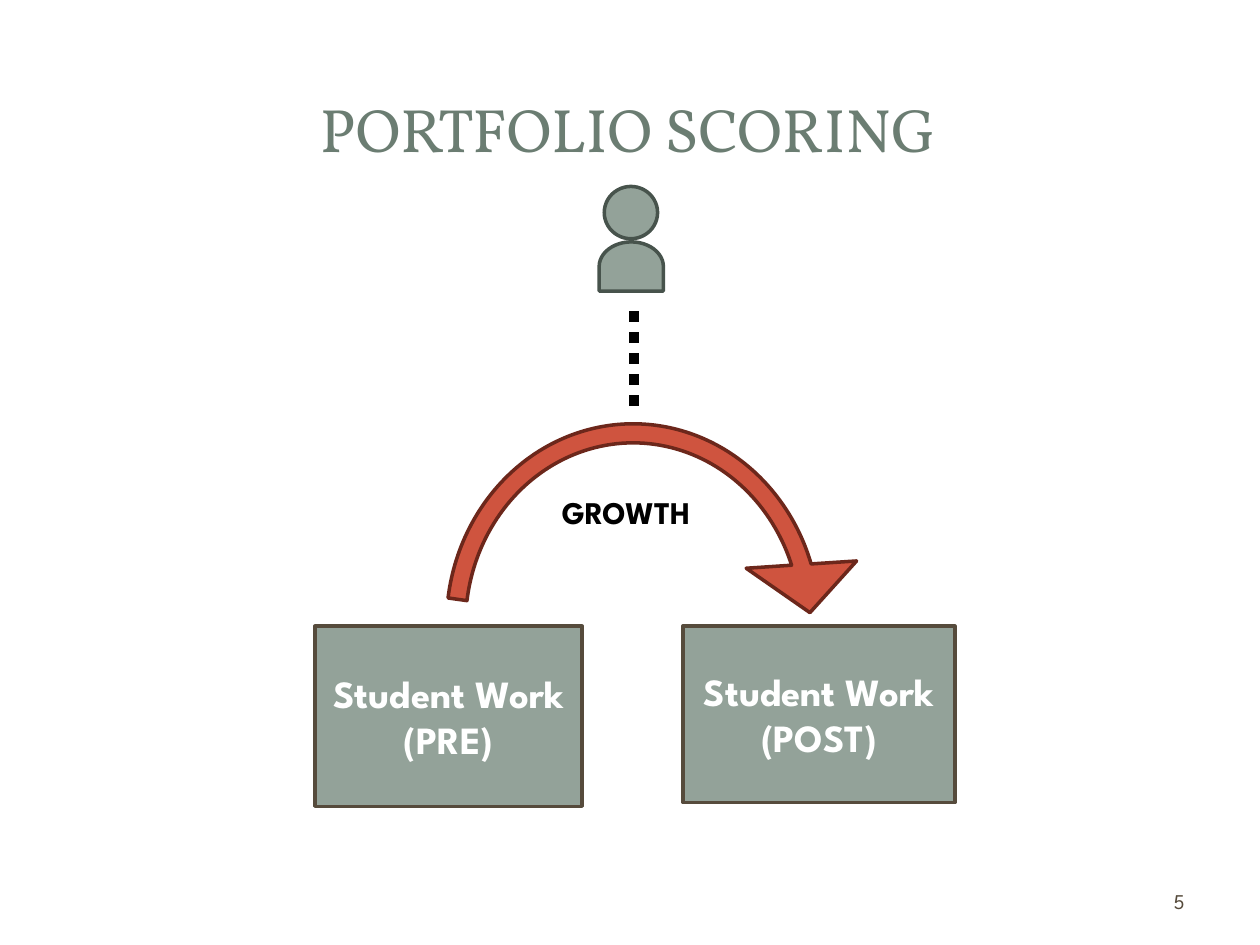
from lxml import etree
from pptx import Presentation
from pptx.dml.color import RGBColor
from pptx.enum.dml import MSO_LINE
from pptx.enum.shapes import MSO_CONNECTOR, MSO_SHAPE
from pptx.enum.text import MSO_ANCHOR, PP_ALIGN
from pptx.oxml.ns import qn
from pptx.util import Inches, Pt

RECTANGLE = MSO_SHAPE.RECTANGLE
CIRCULAR_ARROW = MSO_SHAPE.CIRCULAR_ARROW
HEAD = MSO_SHAPE.FLOWCHART_CONNECTOR
TORSO = MSO_SHAPE.FLOWCHART_DELAY
STRAIGHT = MSO_CONNECTOR.STRAIGHT
DOTTED = MSO_LINE.ROUND_DOT
LEFT, CENTER, RIGHT = PP_ALIGN.LEFT, PP_ALIGN.CENTER, PP_ALIGN.RIGHT
TOP, MIDDLE = MSO_ANCHOR.TOP, MSO_ANCHOR.MIDDLE

COLORS = {
    "title": "6B7D72", "sage": "93A299", "sage_edge": "47534C",
    "brown": "564B3C", "red": "CF543F", "red_edge": "6C271B",
    "white": "FFFFFF", "black": "000000",
}
HEADING_FONT, BODY_FONT = "Vollkorn", "League Spartan"
COLUMNS, ROWS = 100, 75
CELL = Inches(0.1)


def color(name):
    """Return the named palette colour."""
    return RGBColor.from_string(COLORS[name])


def grid(*cells):
    """Turn grid columns and rows into slide lengths."""
    return [round(cell * CELL) for cell in cells]


def write(frame, text, size=18, font=BODY_FONT, ink="black", bold=False,
          align=LEFT, anchor=MIDDLE):
    """Write one formatted paragraph into a text frame."""
    frame.word_wrap = True
    frame.vertical_anchor = anchor
    paragraph = frame.paragraphs[0]
    paragraph.alignment = align
    run = paragraph.add_run()
    run.text = text
    run.font.size, run.font.name, run.font.bold = Pt(size), font, bold
    run.font.color.rgb = color(ink)


def add_label(slide, box, text, **style):
    """Place free-standing text in a grid box."""
    write(slide.shapes.add_textbox(*grid(*box)).text_frame, text, **style)


def add_outlined(shapes, kind, box, fill, edge):
    """Draw a filled preset shape with a two-point outline."""
    shape = shapes.add_shape(kind, *grid(*box))
    shape.shadow.inherit = False
    shape.fill.solid()
    shape.fill.fore_color.rgb = color(fill)
    shape.line.color.rgb = color(edge)
    shape.line.width = Pt(2)
    return shape


def add_work_card(slide, box, stage):
    """Draw a student work card for one stage."""
    card = add_outlined(slide.shapes, RECTANGLE, box, "sage", "brown")
    write(card.text_frame, f"Student Work ({stage})", size=22, ink="white",
          bold=True, align=CENTER)


def add_growth_arc(slide, box):
    """Draw the growth arrow and the label beneath its arch."""
    left, top, width, height = box
    arc = add_outlined(slide.shapes, CIRCULAR_ARROW, box, "red", "red_edge")
    for index, value in enumerate((0.041, 9.46, 204.278, 112.861, 0.119)):
        arc.adjustments[index] = value
    label_box = (left + 0.32 * width, top + 0.22 * height, 0.36 * width, 4)
    add_label(slide, label_box, "GROWTH", bold=True, anchor=TOP)


def add_scorer(slide, box):
    """Draw the scorer from a head and an upturned torso."""
    left, top, width, height = box
    torso_width, torso_height = width, 0.47 * height
    middle = left + width / 2
    center_y = top + height - torso_height / 2
    scorer = slide.shapes.add_group_shape()
    head_box = (middle - 0.42 * width, top, 0.83 * width, height / 2)
    add_outlined(scorer.shapes, HEAD, head_box, "sage", "sage_edge")
    torso_box = (middle - torso_height / 2, center_y - torso_width / 2,
                 torso_height, torso_width)
    torso = add_outlined(scorer.shapes, TORSO, torso_box, "sage", "sage_edge")
    torso.rotation = 270


def add_dotted_link(slide, column, start_row, end_row):
    """Draw the vertical dotted link from the scorer to the growth arrow."""
    link = slide.shapes.add_connector(
        STRAIGHT, *grid(column, start_row, column, end_row))
    link.line.color.rgb = color("black")
    link.line.width = Pt(6)
    link.line.dash_style = DOTTED
    etree.SubElement(link._element.spPr, qn("a:effectLst"))


def main():
    """Build the portfolio scoring slide."""
    deck = Presentation()
    deck.slide_width, deck.slide_height = grid(COLUMNS, ROWS)
    slide = deck.slides.add_slide(deck.slide_layouts[6])
    add_label(slide, (4.7, 4.5, 90.3, 11.4), "PORTFOLIO SCORING", size=35,
              font=HEADING_FONT, ink="title", align=CENTER)
    add_label(slide, (71.7, 69.5, 23.3, 4), "5", size=12, ink="brown",
              align=RIGHT)
    add_work_card(slide, (25, 49.7, 21.2, 14.3), "PRE")
    add_work_card(slide, (54.2, 49.7, 21.6, 14), "POST")
    add_growth_arc(slide, (31.8, 30, 36.9, 39.1))
    add_dotted_link(slide, 50.3, 24.7, 33)
    add_scorer(slide, (47.55, 14.8, 5.1, 8.3))
    deck.save("out.pptx")


if __name__ == "__main__":
    main()
